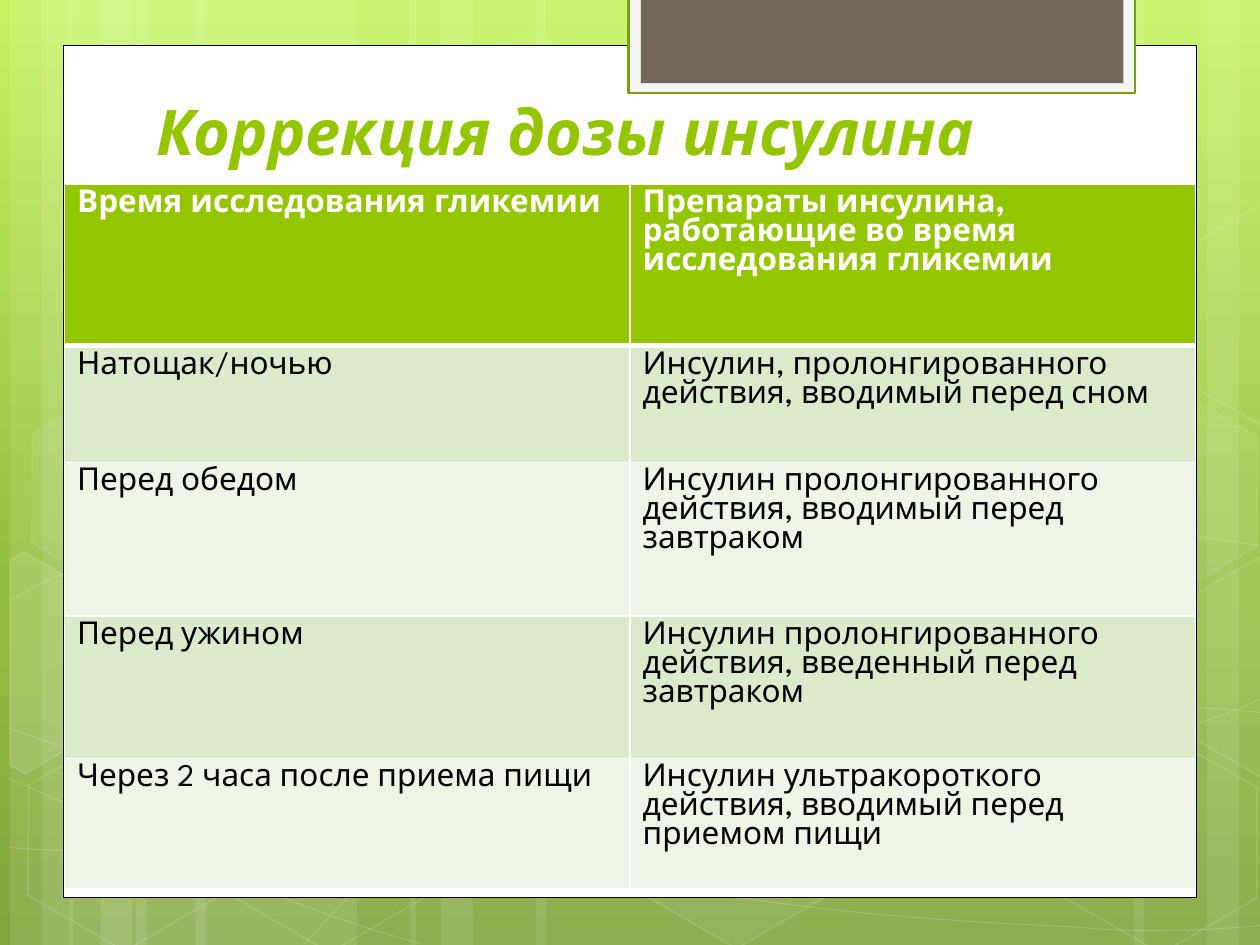
from copy import deepcopy
from math import cos, pi, sin

from lxml.etree import SubElement
from pptx import Presentation
from pptx.dml.color import RGBColor
from pptx.enum.shapes import MSO_SHAPE
from pptx.enum.text import MSO_ANCHOR
from pptx.oxml.ns import qn
from pptx.util import Cm, Pt

FONT = "League Spartan"
WHITE = RGBColor(0xFF, 0xFF, 0xFF)
BLACK = RGBColor(0x00, 0x00, 0x00)
GREEN = RGBColor(0x94, 0xC6, 0x00)
DARK_GREEN = RGBColor(0x74, 0xA5, 0x10)
PALE_GREEN = RGBColor(0xDC, 0xEA, 0xCC)
PALEST_GREEN = RGBColor(0xEE, 0xF5, 0xE7)
OFF_WHITE = RGBColor(0xF5, 0xF5, 0xF5)
BROWN = RGBColor(0x71, 0x68, 0x5A)
BACKGROUND_STOPS = [
    (0, RGBColor(0xC3, 0xF3, 0x5F)),
    (0.62, RGBColor(0x93, 0xBF, 0x3F)),
    (1, RGBColor(0x81, 0xA5, 0x3E)),
]
SLIDE_WIDTH, SLIDE_HEIGHT = 25.4, 19.05

# left, width
STRIPES = [
    (2.74, 4.45), (0.2, 1.27), (0.84, 2.12), (3.94, 4.45), (1.4, 1.27), (2.03, 2.12),
    (18.62, 4.45), (24.33, 1.27), (22.86, 2.12), (10.8, 7.82), (8.26, 1.27), (8.89, 2.12),
]
# start point, then two control points and an end point for each Bezier segment
CURVES = [
    [(0.18, 17.09), (1.55, 17.17), (2.92, 17.25), (4.83, 17.22),
     (6.73, 17.2), (9.09, 17.15), (11.63, 16.89), (14.17, 16.64), (17.78, 16.15),
     (20.12, 15.67), (22.43, 15.19), (24.82, 14.43), (25.58, 14)],
    [(0.18, 12.12), (0.91, 11.71), (1.65, 11.33), (3.07, 10.95),
     (4.52, 10.57), (6.58, 10.01), (8.81, 9.83), (11.07, 9.65), (13.82, 9.63),
     (16.61, 9.83), (19.41, 10.03), (24.05, 10.82), (25.58, 11.02)],
    [(0.15, 15.67), (3.23, 17.07), (6.27, 18.47), (8.48, 19.02)],
    [(0.18, 14.68), (0.97, 14.96), (1.78, 15.24), (3.25, 15.65),
     (4.72, 16.03), (6.93, 16.66), (9.07, 17.09), (11.18, 17.53), (13.84, 17.98),
     (15.95, 18.24), (18.06, 18.52), (20.32, 18.62), (21.67, 18.69),
     (22.99, 18.8), (23.34, 18.75), (24, 18.75), (24.66, 18.72), (25.12, 18.69),
     (25.58, 18.64)],
    [(6.15, 19.02), (6.6, 18.52), (7.06, 18.01), (7.67, 17.55),
     (8.28, 17.09), (9.14, 16.59), (9.86, 16.23), (10.57, 15.88), (11, 15.72),
     (11.94, 15.47), (12.85, 15.21), (14.55, 14.86), (15.44, 14.68),
     (16.36, 14.5), (16.48, 14.5), (17.27, 14.45), (18.06, 14.38), (19.3, 14.3),
     (20.17, 14.27), (21.06, 14.25), (22.5, 14.27), (22.5, 14.27),
     (23.07, 14.27), (23.64, 14.27), (24.21, 14.27), (24.66, 14.3), (25.1, 14.33),
     (25.32, 14.35), (25.55, 14.38), (25.48, 14.35), (25.55, 14.38)],
]
# left, top, fill opacity, line opacity
HEXAGONS = [
    (8.48, 0.91, 4, 8), (12.62, 14.96, 6, 12), (0.28, 15.01, None, 12),
    (0.36, 7.92, 7, 8), (4.42, 15.04, None, 12), (19.13, 11.51, 10, 12),
    (21.18, 15.06, None, 12), (21.18, 7.98, 7, 8),
]
HEXAGON_ROTATION = 30
# outlines around their centre, as they stand on the slide
LEFT_CUT = [(-0.71, -2.29), (-0.43, -2.46), (1.52, -1.35), (1.5, 0.89), (-0.41, 2.01),
            (-0.71, 1.83)]
RIGHT_CUT = [(-1.5, -0.89), (0.41, -2.01), (0.61, -1.88), (0.61, 2.36), (0.43, 2.46),
             (-1.5, 1.35)]
# outline, centre, fill opacity
CUT_HEXAGONS = [
    (LEFT_CUT, (0.91, 13.59), 10),
    (RIGHT_CUT, (25.02, 13.21), 4),
    (RIGHT_CUT, (25.02, 6.12), None),
]
COLUMN_WIDTH = 11.4
ROW_HEIGHTS = [3.25, 2.35, 3.1, 2.87, 2.63]
ROWS = [
    ("Время исследования гликемии",
     "Препараты инсулина, работающие во время исследования гликемии"),
    ("Натощак/ночью", "Инсулин, пролонгированного действия, вводимый перед сном"),
    ("Перед обедом", "Инсулин пролонгированного действия, вводимый перед завтраком"),
    ("Перед ужином", "Инсулин пролонгированного действия, введенный перед завтраком"),
    ("Через 2 часа после приема пищи",
     "Инсулин ультракороткого действия, вводимый перед приемом пищи"),
]


def set_background(slide):
    fill = slide.background.fill
    fill.gradient()
    fill.gradient_angle = 270
    stop_list = slide.element.find(".//" + qn("a:gsLst"))
    stop_list.append(deepcopy(stop_list[-1]))
    for stop, (position, color) in zip(fill.gradient_stops, BACKGROUND_STOPS):
        stop.position = position
        stop.color.rgb = color


def set_opacity(shape, parent_tag, percent):
    color = shape.element.spPr.find(parent_tag + "/" + qn("a:srgbClr"))
    SubElement(color, qn("a:alpha"), val=str(percent * 1000))


def style(shape, fill=None, fill_opacity=100, line=None, line_width=1, line_opacity=100):
    shape.shadow.inherit = False
    if fill is None or fill_opacity is None:
        shape.fill.background()
    else:
        shape.fill.solid()
        shape.fill.fore_color.rgb = fill
        if fill_opacity < 100:
            set_opacity(shape, qn("a:solidFill"), fill_opacity)
    if line is None:
        shape.line.fill.background()
    else:
        shape.line.color.rgb = line
        shape.line.width = Pt(line_width)
        if line_opacity < 100:
            set_opacity(shape, qn("a:ln") + "/" + qn("a:solidFill"), line_opacity)


def add_preset(slide, kind, left, top, width, height, **look):
    shape = slide.shapes.add_shape(kind, Cm(left), Cm(top), Cm(width), Cm(height))
    style(shape, **look)
    return shape


def add_outline(slide, points, close, **look):
    vertices = [(Cm(x), Cm(y)) for x, y in points]
    builder = slide.shapes.build_freeform(*vertices[0])
    builder.add_line_segments(vertices[1:], close=close)
    shape = builder.convert_to_shape()
    style(shape, **look)
    return shape


def bend_segments(shape):
    """Turn each three straight segments into one Bezier segment."""
    segments = list(shape.element.iter(qn("a:lnTo")))
    outline = segments[0].getparent()
    for start in range(0, len(segments), 3):
        curve = SubElement(outline, qn("a:cubicBezTo"))
        for segment in segments[start:start + 3]:
            curve.append(segment[0])
            outline.remove(segment)


def turn_back(points, centre, degrees):
    """Undo a rotation of points that are relative to the centre."""
    angle = degrees * pi / 180
    return [(centre[0] + x * cos(angle) + y * sin(angle),
             centre[1] - x * sin(angle) + y * cos(angle)) for x, y in points]


def write_text(text_frame, text, size=18, color=BLACK, bold=False, italic=False):
    text_frame.word_wrap = True
    run = text_frame.paragraphs[0].add_run()
    run.text = text
    run.font.name = FONT
    run.font.size = Pt(size)
    run.font.color.rgb = color
    run.font.bold = bold
    run.font.italic = italic


def set_borders(cell, widths):
    """Draw white borders; widths are points for left, right, top and bottom."""
    properties = cell._tc.get_or_add_tcPr()
    for index, (side, width) in enumerate(zip("LRTB", widths)):
        line = SubElement(properties, qn("a:ln" + side), w=str(Pt(width)))
        SubElement(SubElement(line, qn("a:solidFill")), qn("a:srgbClr"), val=str(WHITE))
        properties.insert(index, line)


def add_backdrop(slide):
    for left, width in STRIPES:
        add_preset(slide, MSO_SHAPE.RECTANGLE, left, 0, width, SLIDE_HEIGHT,
                   fill=WHITE, fill_opacity=10)
    for points in CURVES:
        bend_segments(add_outline(slide, points, False, line=WHITE, line_width=0.5,
                                  line_opacity=20))
    for left, top, fill_opacity, line_opacity in HEXAGONS:
        hexagon = add_preset(slide, MSO_SHAPE.HEXAGON, left, top, 4.45, 3.86, fill=WHITE,
                             fill_opacity=fill_opacity, line=WHITE, line_opacity=line_opacity)
        hexagon.adjustments[0] = 0.285
        hexagon.rotation = HEXAGON_ROTATION
    for points, centre, fill_opacity in CUT_HEXAGONS:
        hexagon = add_outline(slide, turn_back(points, centre, HEXAGON_ROTATION), True,
                              fill=WHITE, fill_opacity=fill_opacity, line=WHITE,
                              line_opacity=12)
        hexagon.rotation = HEXAGON_ROTATION


def add_panel(slide):
    add_preset(slide, MSO_SHAPE.RECTANGLE, 1.27, 0.91, 22.86, 17.19,
               fill=WHITE, line=BLACK, line_width=0.5)
    add_preset(slide, MSO_SHAPE.RECTANGLE, 12.67, -0.05, 10.21, 1.93,
               fill=OFF_WHITE, line=DARK_GREEN, line_width=1.25)
    add_preset(slide, MSO_SHAPE.RECTANGLE, 12.92, -0.05, 9.73, 1.73, fill=BROWN)


def add_title(slide):
    title = slide.shapes.add_textbox(Cm(2.9), Cm(1.92), Cm(19.5), Cm(1.6))
    title.text_frame.vertical_anchor = MSO_ANCHOR.BOTTOM
    write_text(title.text_frame, "Коррекция дозы инсулина",
               size=36, color=GREEN, bold=True, italic=True)


def add_dose_table(slide):
    table = slide.shapes.add_table(len(ROWS), 2, Cm(1.3), Cm(3.72),
                                   Cm(2 * COLUMN_WIDTH), Cm(sum(ROW_HEIGHTS))).table
    for column in table.columns:
        column.width = Cm(COLUMN_WIDTH)
    for index, (texts, height) in enumerate(zip(ROWS, ROW_HEIGHTS)):
        table.rows[index].height = Cm(height)
        header = index == 0
        fill = GREEN if header else (PALEST_GREEN, PALE_GREEN)[index % 2]
        for cell, text in zip(table.rows[index].cells, texts):
            cell.fill.solid()
            cell.fill.fore_color.rgb = fill
            set_borders(cell, (1, 1, 3 if index == 1 else 1, 3 if header else 1))
            write_text(cell.text_frame, text, color=WHITE if header else BLACK, bold=header)


def main():
    presentation = Presentation()
    presentation.slide_width = Cm(SLIDE_WIDTH)
    presentation.slide_height = Cm(SLIDE_HEIGHT)
    slide = presentation.slides.add_slide(presentation.slide_layouts[6])
    set_background(slide)
    add_backdrop(slide)
    add_panel(slide)
    add_title(slide)
    add_dose_table(slide)
    presentation.save("out.pptx")


if __name__ == "__main__":
    main()
